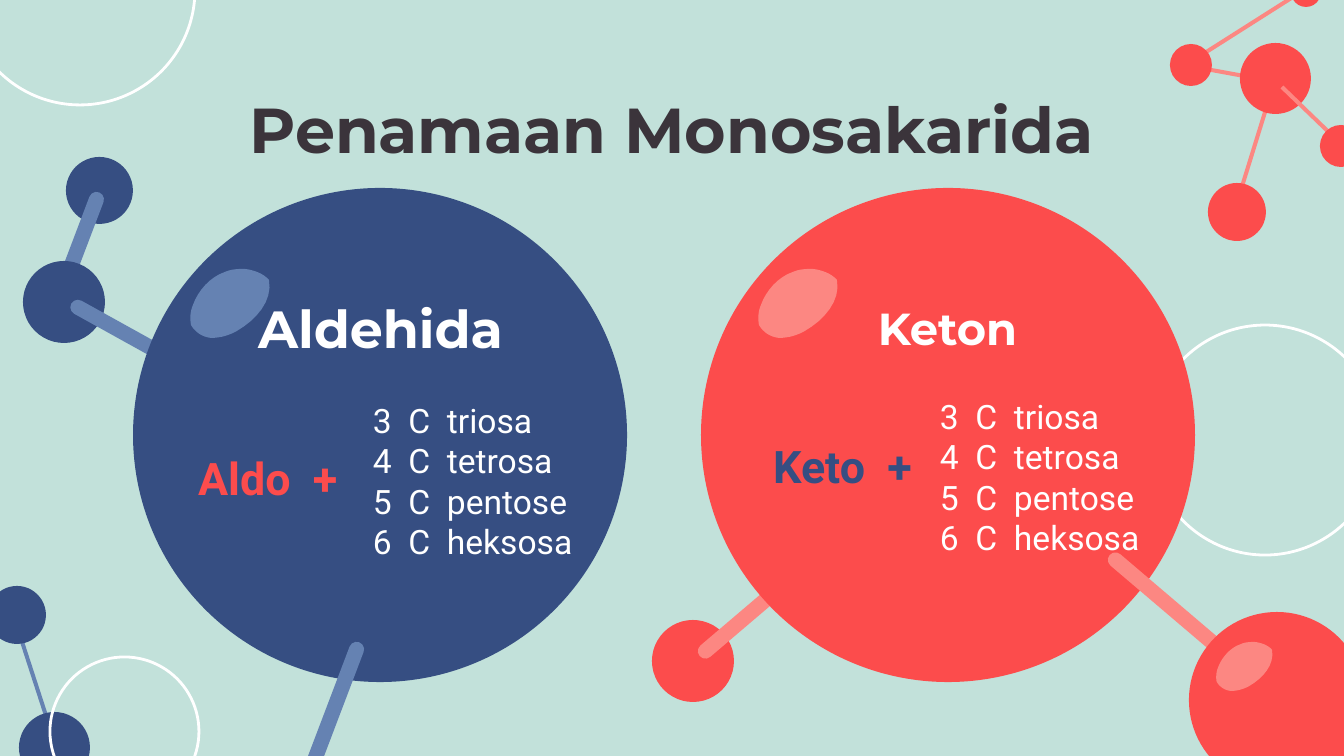
"""Builds the slide that names monosaccharides by aldehyde and ketone group."""
from lxml import etree
from pptx import Presentation
from pptx.dml.color import RGBColor
from pptx.enum.shapes import MSO_CONNECTOR, MSO_SHAPE
from pptx.enum.text import MSO_ANCHOR, MSO_AUTO_SIZE, PP_ALIGN
from pptx.oxml.ns import qn
from pptx.util import Pt

OVAL = MSO_SHAPE.OVAL
BAR = MSO_SHAPE.ROUNDED_RECTANGLE
STRAIGHT = MSO_CONNECTOR.STRAIGHT
TOP, BOTTOM = MSO_ANCHOR.TOP, MSO_ANCHOR.BOTTOM
LEFT, CENTER = PP_ALIGN.LEFT, PP_ALIGN.CENTER
FIXED = MSO_AUTO_SIZE.NONE
SCALE = 6804
INSET = 13
COLORS = {
    "mint": "C2E1DA", "navy": "364E82", "sky": "6582B2", "red": "FC4C4C",
    "pink": "FC8782", "white": "FFFFFF", "dark": "3B343B",
}
COLORS = {name: RGBColor.from_string(value) for name, value in COLORS.items()}

presentation = Presentation()
presentation.slide_width = 1344 * SCALE
presentation.slide_height = 756 * SCALE
slide = presentation.slides.add_slide(presentation.slide_layouts[5])
slide.background.fill.solid()
slide.background.fill.fore_color.rgb = COLORS["mint"]


def add_filled(kind, x, y, width, height, color, rotation=0):
    shape = slide.shapes.add_shape(kind, x * SCALE, y * SCALE, width * SCALE, height * SCALE)
    shape.shadow.inherit = False
    shape.line.fill.background()
    shape.fill.solid()
    shape.fill.fore_color.rgb = COLORS[color]
    shape.rotation = rotation
    return shape


def write_text(text, box, size, color, font="Montserrat", bold=True, align=CENTER,
               anchor=TOP, spacing=1.0, indent=0, shape=None):
    shape = shape or slide.shapes.add_textbox(0, 0, 0, 0)
    shape.left, shape.top, shape.width, shape.height = [length * SCALE for length in box]
    frame = shape.text_frame
    frame.word_wrap = True
    frame.auto_size = FIXED
    frame.vertical_anchor = anchor
    frame.margin_left = frame.margin_right = INSET * SCALE
    frame.margin_top = frame.margin_bottom = INSET * SCALE
    frame.text = text
    for paragraph in frame.paragraphs:
        paragraph.alignment = align
        paragraph.line_spacing = spacing
        if indent:
            paragraph._p.get_or_add_pPr().set("marL", str(indent * SCALE))
        paragraph.font.name = font
        paragraph.font.size = Pt(size)
        paragraph.font.bold = bold
        paragraph.font.color.rgb = COLORS[color]


small_molecules = [
    ((15, 620, 52, 734), "sky", "navy", [(-12, 586, 58), (19, 712, 71)]),
    ((1195, 67, 1266, 80), "pink", "red", []),
    ((1271, 93, 1236, 206), "pink", "red", [(1208, 183, 58), (1240, 43, 71)]),
    ((1282, 87, 1339, 142), "pink", "red", [(1320, 125, 42)]),
    ((1304, -10, 1189, 63), "pink", "red", [(1291, -23, 30), (1170, 44, 42)]),
]
for ends, bond_color, atom_color, atoms in small_molecules:
    bond = slide.shapes.add_connector(STRAIGHT, *[end * SCALE for end in ends])
    bond.line.width = 4 * SCALE
    bond.line.color.rgb = COLORS[bond_color]
    etree.SubElement(bond._element.spPr, qn("a:effectLst"))
    for x, y, diameter in atoms:
        add_filled(OVAL, x, y, diameter, diameter, atom_color)

for x, y, diameter in [(-35, -125, 230), (50, 657, 149), (1150, 325, 230)]:
    ring = add_filled(OVAL, x, y, diameter, diameter, "white")
    ring.fill.background()
    ring.line.color.rgb = COLORS["white"]
    ring.line.width = Pt(1.5)

large_molecules = [
    (OVAL, 66, 157, 67, 67, "navy"),
    (BAR, 28, 234, 105, 15, "sky", 290.8),
    (OVAL, 23, 261, 82, 82, "navy"),
    (BAR, 62, 332, 148, 15, "sky", 29),
    (OVAL, 133, 188, 494, 494, "navy"),
    (BAR, 259, 704, 148, 15, "sky", 290.8),
    (OVAL, 652, 620, 82, 82, "red"),
    (BAR, 680, 595, 165, 15, "pink", 139.6),
    (OVAL, 701, 188, 494, 494, "red"),
    (BAR, 1090, 601, 165, 15, "pink", 40.4),
    (OVAL, 1189, 612, 176, 176, "red"),
]
for part in large_molecules:
    shape = add_filled(*part)
    if part[0] == BAR:
        shape.adjustments[0] = 0.5

highlight_start = (55, 0)
highlight_curves = [
    ((48, 0), (42, 0), (35, 3)),
    ((20, 8), (8, 22), (3, 36)),
    ((0, 43), (0, 50), (1, 56)),
    ((5, 63), (12, 68), (21, 69)),
    ((31, 69), (40, 66), (47, 62)),
    ((66, 51), (83, 32), (79, 11)),
    ((73, 4), (63, 1), (55, 0)),
]
outline = [highlight_start]
for curve in highlight_curves:
    controls = (outline[-1], *curve)
    for step in range(1, 9):
        t = step / 8
        weights = ((1 - t) ** 3, 3 * t * (1 - t) ** 2, 3 * t ** 2 * (1 - t), t ** 3)
        outline.append(tuple(
            sum(weight * point[axis] for weight, point in zip(weights, controls))
            for axis in (0, 1)
        ))
for x, y, ratio, color in [(190, 269, 1, "sky"), (758, 269, 1, "pink"), (1216, 642, 0.71, "pink")]:
    points = [((x + px * ratio) * SCALE, (y + py * ratio) * SCALE) for px, py in outline]
    builder = slide.shapes.build_freeform(*points[0])
    builder.add_line_segments(points[1:], close=True)
    highlight = builder.convert_to_shape()
    highlight.shadow.inherit = False
    highlight.fill.solid()
    highlight.fill.fore_color.rgb = COLORS[color]
    highlight.line.fill.background()

write_text("Penamaan Monosakarida", (105, 66, 1134, 85), 34, "dark",
           spacing=1.15, shape=slide.shapes.title)
write_text("Aldehida", (211, 290, 339, 82), 28, "white", anchor=BOTTOM)
write_text("Keton", (778, 285, 339, 82), 24, "white", anchor=BOTTOM)
write_text("Aldo  +", (185, 438, 181, 80), 24, "red", font="Roboto", align=LEFT)
write_text("Keto  +", (673, 426, 339, 78), 24, "navy", font="Roboto")

sugars = "3  C  triosa\n4  C  tetrosa\n5  C  pentose\n6  C  heksosa"
for x, y in [(226, 387), (793, 383)]:
    write_text(sugars, (x, y, 376, 165), 18, "white", font="Roboto", bold=False,
               align=LEFT, indent=134)

presentation.save("out.pptx")
